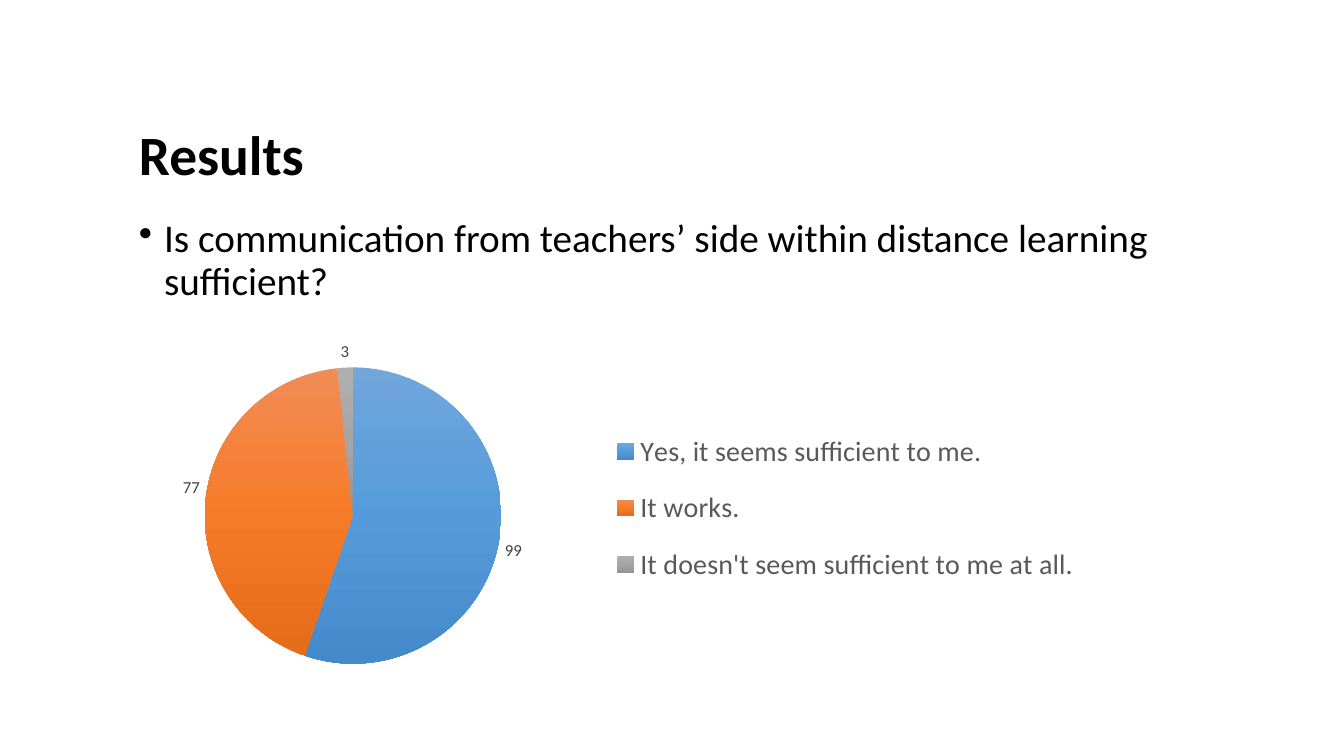
import lxml.etree
import pptx
import pptx.chart.data
import pptx.dml.color
import pptx.enum.chart
import pptx.enum.text
import pptx.oxml
import pptx.oxml.ns
import pptx.util

WIDTH, HEIGHT = 13.33, 7.5
FONT = "Calibri"
COLORS = {"text": "000000", "legend": "595959", "label": "404040"}

# Answer, votes, gradient from top to bottom
ANSWERS = [
    ("Yes, it seems sufficient to me. ", 99, ("71A6DB", "559BDB", "448ACA")),
    ("It works.", 77, ("F18C57", "F67B28", "E56C19")),
    ("It doesn't seem sufficient to me at all. ", 3, ("AFAFAF", "A5A5A5", "939393")),
]


def area(left, top, width, height):
    """Turn shares of the slide into lengths."""
    return [pptx.util.Inches(share * side) for share, side in
            zip((left, top, width, height), (WIDTH, HEIGHT) * 2)]


def style_font(font, size, color, bold=False):
    font.name = FONT
    font.size = pptx.util.Pt(size)
    font.bold = bold
    font.color.rgb = pptx.dml.color.RGBColor.from_string(COLORS[color])


def add_text(slide, box, text, size, bold=False, bullet=False,
             anchor=pptx.enum.text.MSO_ANCHOR.TOP):
    text_frame = slide.shapes.add_textbox(*area(*box)).text_frame
    text_frame.word_wrap = True
    text_frame.vertical_anchor = anchor
    text_frame.text = text
    paragraph = text_frame.paragraphs[0]
    paragraph.line_spacing = 0.9
    if bullet:
        properties = paragraph._p.get_or_add_pPr()
        indent = pptx.util.Inches(0.25)
        properties.set("marL", str(indent))
        properties.set("indent", str(-indent))
        mark = lxml.etree.SubElement(properties, pptx.oxml.ns.qn("a:buChar"))
        mark.set("char", "•")
    style_font(paragraph.runs[0].font, size, "text", bold)


def fill_gradient(point, colors):
    stops = "".join(
        f'<a:gs pos="{index * 50000}"><a:srgbClr val="{color}"/></a:gs>'
        for index, color in enumerate(colors))
    gradient = pptx.oxml.parse_xml(
        f'<a:gradFill {pptx.oxml.ns.nsdecls("a")} rotWithShape="1">'
        f'<a:gsLst>{stops}</a:gsLst><a:lin ang="5400000" scaled="0"/></a:gradFill>')
    point.format.line.fill.background()
    point.format._element.get_or_add_spPr().insert(0, gradient)


def make_layout(x, y, w, h, inner=False):
    """Fix a chart part at shares of the chart's size."""
    target = '<c:layoutTarget val="inner"/>' if inner else ""
    lengths = "".join(f'<c:{name} val="{share}"/>' for name, share in
                      (("x", x), ("y", y), ("w", w), ("h", h)))
    return pptx.oxml.parse_xml(
        f'<c:layout {pptx.oxml.ns.nsdecls("c")}><c:manualLayout>{target}'
        '<c:xMode val="edge"/><c:yMode val="edge"/>'
        f'{lengths}</c:manualLayout></c:layout>')


def set_layout(parent, layout, position):
    for previous in parent.findall(pptx.oxml.ns.qn("c:layout")):
        parent.remove(previous)
    parent.insert(position, layout)


def add_pie(slide, box):
    data = pptx.chart.data.CategoryChartData()
    data.categories = [answer for answer, _, _ in ANSWERS]
    data.add_series("Series 1", [votes for _, votes, _ in ANSWERS])
    chart = slide.shapes.add_chart(
        pptx.enum.chart.XL_CHART_TYPE.PIE, *area(*box), data).chart
    chart.has_title = False
    style_font(chart.font, 10, "text")

    # Slices and their values
    plot = chart.plots[0]
    plot.vary_by_categories = True
    for index, (_, _, colors) in enumerate(ANSWERS):
        fill_gradient(plot.series[0].points[index], colors)
    labels = plot.series[0].data_labels
    labels.show_value = True
    labels.show_percentage = False
    labels.show_category_name = False
    labels.position = pptx.enum.chart.XL_LABEL_POSITION.OUTSIDE_END
    style_font(labels.font, 12, "label")

    # Legend
    chart.has_legend = True
    legend = chart.legend
    legend.position = pptx.enum.chart.XL_LEGEND_POSITION.RIGHT
    legend.include_in_layout = False
    style_font(legend.font, 20, "legend")

    # Places inside the chart
    set_layout(plot._element.getparent(),
               make_layout(0.05, 0.11, 0.26, 0.79, inner=True), 0)
    set_layout(legend._element, make_layout(0.4, 0.23, 0.43, 0.51), 1)


def main():
    presentation = pptx.Presentation()
    presentation.slide_width = pptx.util.Inches(WIDTH)
    presentation.slide_height = pptx.util.Inches(HEIGHT)
    slide = presentation.slides.add_slide(presentation.slide_layouts[6])

    # Heading and question
    add_text(slide, (0.096, 0.16, 0.863, 0.097), "Results", 39.6, bold=True,
             anchor=pptx.enum.text.MSO_ANCHOR.MIDDLE)
    add_text(slide, (0.096, 0.283, 0.892, 0.572),
             "Is communication from teachers’ side within distance learning sufficient?",
             28, bullet=True)

    # Answers
    add_pie(slide, (0.11, 0.431, 0.848, 0.497))
    presentation.save("out.pptx")


if __name__ == "__main__":
    main()
